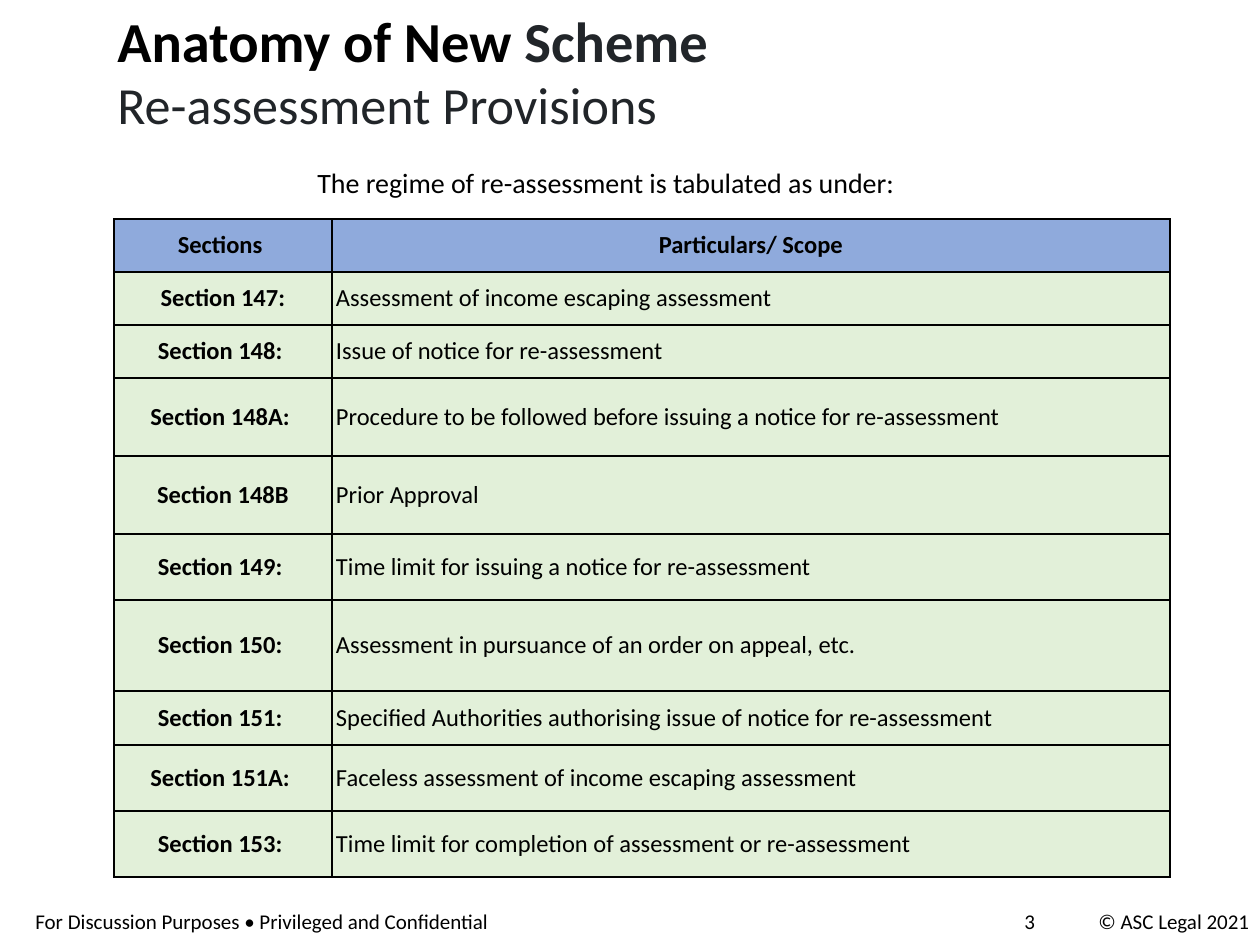
from lxml import etree
from pptx import Presentation
from pptx import util as u
from pptx.dml.color import RGBColor
from pptx.enum import text
from pptx.oxml import ns

PX = 914400 // 126
BLACK = RGBColor(0x00, 0x00, 0x00)
CHARCOAL = RGBColor(0x21, 0x25, 0x29)
HEADER_BLUE = RGBColor(0x8F, 0xAA, 0xDC)
ROW_GREEN = RGBColor(0xE2, 0xF0, 0xD9)
JUSTIFY = text.PP_ALIGN.JUSTIFY
CENTER = text.PP_ALIGN.CENTER


def add_span(para, words, size, color=BLACK, bold=False):
    span = para.add_run()
    span.text = words
    span.font.name = "Calibri"
    span.font.size = u.Pt(size)
    span.font.bold = bold
    span.font.color.rgb = color


def add_box(left, top, width, height, wrap=True):
    """Add an empty text box measured in px and return its text frame."""
    box = page.shapes.add_textbox(left * PX, top * PX, width * PX, height * PX)
    box.text_frame.word_wrap = wrap
    return box.text_frame


deck = Presentation()
deck.slide_width = 1260 * PX
deck.slide_height = 945 * PX
page = deck.slides.add_slide(deck.slide_layouts[6])

# Footer
for words, left, width, wrap in [
    ("© ASC Legal 2021", 1086, 185, True),
    ("For Discussion Purposes • Privileged and Confidential", 23, 494, True),
    ("3", 1012, 50, False),
]:
    footer = add_box(left, 902, width, 38, wrap)
    add_span(footer.paragraphs[0], words, 12)

# Title
title = add_box(105, 18, 906, 126)
heading = title.paragraphs[0]
add_span(heading, "Anatomy of New ", 32.3, BLACK, True)
add_span(heading, "Scheme", 32.3, CHARCOAL, True)
subheading = title.add_paragraph()
subheading.space_before = u.Pt(10)
add_span(subheading, "Re-assessment Provisions", 29.8, CHARCOAL)
for para in title.paragraphs:
    para.alignment = JUSTIFY
    para.line_spacing = 0.7

# Sections table
rows = [
    ("Sections ", "Particulars/ Scope", 53),
    (" Section 147: ", "Assessment of income escaping assessment", 53),
    ("Section 148: ", "Issue of notice for re-assessment", 53),
    ("Section 148A: ", "Procedure to be followed before issuing a notice for re-assessment", 78),
    ("Section 148B", "Prior Approval", 78),
    ("Section 149: ", "Time limit for issuing a notice for re-assessment", 66),
    ("Section 150: ", "Assessment in pursuance of an order on appeal, etc.", 91),
    ("Section 151: ", "Specified Authorities authorising issue of notice for re-assessment", 54),
    ("Section 151A: ", "Faceless assessment of income escaping assessment", 66),
    ("Section 153: ", "Time limit for completion of assessment or re-assessment", 66),
]
widths = [218, 838]
total_height = sum(height for _, _, height in rows)
table = page.shapes.add_table(
    len(rows), len(widths), 114 * PX, 219 * PX, sum(widths) * PX, total_height * PX
).table
for column, width in zip(table.columns, widths):
    column.width = width * PX

for r, (section, scope, height) in enumerate(rows):
    table.rows[r].height = height * PX
    for c, words in enumerate((section, scope)):
        cell = table.cell(r, c)
        is_label = r == 0 or c == 0
        cell.vertical_anchor = text.MSO_ANCHOR.MIDDLE
        cell.margin_left = cell.margin_right = 4 * PX
        cell.margin_top = cell.margin_bottom = 3 * PX
        para = cell.text_frame.paragraphs[0]
        para.alignment = CENTER if is_label else JUSTIFY
        add_span(para, words, 14, BLACK, is_label)
        properties = cell._tc.get_or_add_tcPr()
        for side in ("a:lnL", "a:lnR", "a:lnT", "a:lnB"):
            border = etree.SubElement(properties, ns.qn(side), w=str(u.Pt(1)))
            fill = etree.SubElement(border, ns.qn("a:solidFill"))
            etree.SubElement(fill, ns.qn("a:srgbClr"), val=str(BLACK))
        cell.fill.solid()
        cell.fill.fore_color.rgb = ROW_GREEN if r else HEADER_BLUE

# Lead-in above the table
lead_in = add_box(305, 159, 610, 47, False)
lead_in.vertical_anchor = text.MSO_ANCHOR.MIDDLE
lead_in.paragraphs[0].alignment = JUSTIFY
add_span(lead_in.paragraphs[0], "The regime of re-assessment is tabulated as under:", 16)

deck.save("out.pptx")
